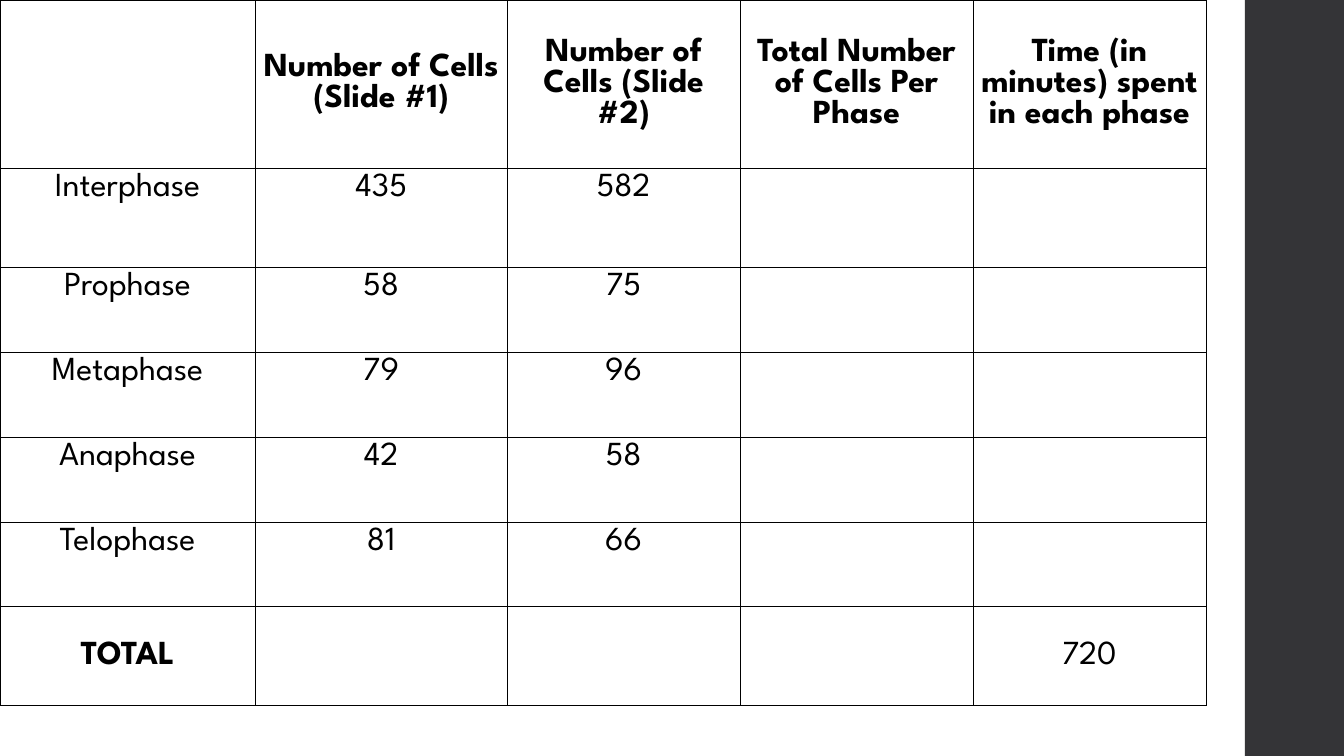
from lxml.etree import SubElement
from pptx import Presentation
from pptx.dml.color import RGBColor
from pptx.enum.shapes import MSO_SHAPE
from pptx.enum.text import MSO_ANCHOR, PP_ALIGN
from pptx.oxml.ns import qn
from pptx.util import Cm, Pt

# Content
ROWS = [
    ("", "Number of Cells\n(Slide #1)", "Number of Cells (Slide #2)",
     "Total Number of Cells Per Phase", "Time (in minutes) spent in each phase"),
    ("Interphase", "435", "582", "", ""),
    ("Prophase", "58", "75", "", ""),
    ("Metaphase", "79", "96", "", ""),
    ("Anaphase", "42", "58", "", ""),
    ("Telophase", "81", "66", "", ""),
    ("TOTAL", "", "", "", "720"),
]

# Format
BLACK = RGBColor(0x00, 0x00, 0x00)
CHARCOAL = RGBColor(0x34, 0x34, 0x37)
COLUMN_WIDTHS = [6.43, 6.35] + [5.87] * 3
ROW_HEIGHTS = [4.24, 2.49] + [2.14] * 4 + [2.49]
BAR_LEFT, BAR_WIDTH = 31.37, 2.54
FONT = {"name": "League Spartan", "size": Pt(24)}
MARGINS = {"margin_left": Cm(0.18), "margin_right": Cm(0.18),
           "margin_top": Cm(0.13), "margin_bottom": Cm(0.13)}


def set_attributes(target, values):
    for name, value in values.items():
        setattr(target, name, value)


def add_borders(cell):
    properties = cell._tc.get_or_add_tcPr()
    for side in ("lnL", "lnR", "lnT", "lnB"):
        line = SubElement(properties, qn(f"a:{side}"), w=str(Pt(0.5)))
        fill = SubElement(line, qn("a:solidFill"))
        SubElement(fill, qn("a:srgbClr"), val=str(BLACK))


def format_cell(cell, text, bold, anchor):
    add_borders(cell)
    cell.fill.background()
    set_attributes(cell, {**MARGINS, "vertical_anchor": anchor})
    cell.text_frame.text = text
    for paragraph in cell.text_frame.paragraphs:
        paragraph.alignment = PP_ALIGN.CENTER
        set_attributes(paragraph.font, {**FONT, "bold": bold})
        for run in paragraph.runs:
            set_attributes(run.font, {**FONT, "bold": bold})
            run.font.color.rgb = BLACK


presentation = Presentation()
presentation.slide_width, presentation.slide_height = Cm(33.87), Cm(19.05)
slide = presentation.slides.add_slide(presentation.slide_layouts[6])

# Side bar
bar = slide.shapes.add_shape(MSO_SHAPE.RECTANGLE, Cm(BAR_LEFT), 0,
                             Cm(BAR_WIDTH), presentation.slide_height)
bar.shadow.inherit = False
bar.fill.solid()
bar.fill.fore_color.rgb = CHARCOAL
bar.line.fill.background()

# Cell count table
table = slide.shapes.add_table(len(ROWS), len(COLUMN_WIDTHS), 0, 0,
                               Cm(sum(COLUMN_WIDTHS)), Cm(sum(ROW_HEIGHTS))).table
set_attributes(table, {"first_row": False, "horz_banding": False})
for column, width in zip(table.columns, COLUMN_WIDTHS):
    column.width = Cm(width)
for row, height in zip(table.rows, ROW_HEIGHTS):
    row.height = Cm(height)

last_row = len(ROWS) - 1
for row_index, texts in enumerate(ROWS):
    anchor = MSO_ANCHOR.MIDDLE if row_index in (0, last_row) else MSO_ANCHOR.TOP
    for column_index, text in enumerate(texts):
        bold = row_index == 0 or (row_index == last_row and column_index == 0)
        format_cell(table.cell(row_index, column_index), text, bold, anchor)

presentation.save("out.pptx")
